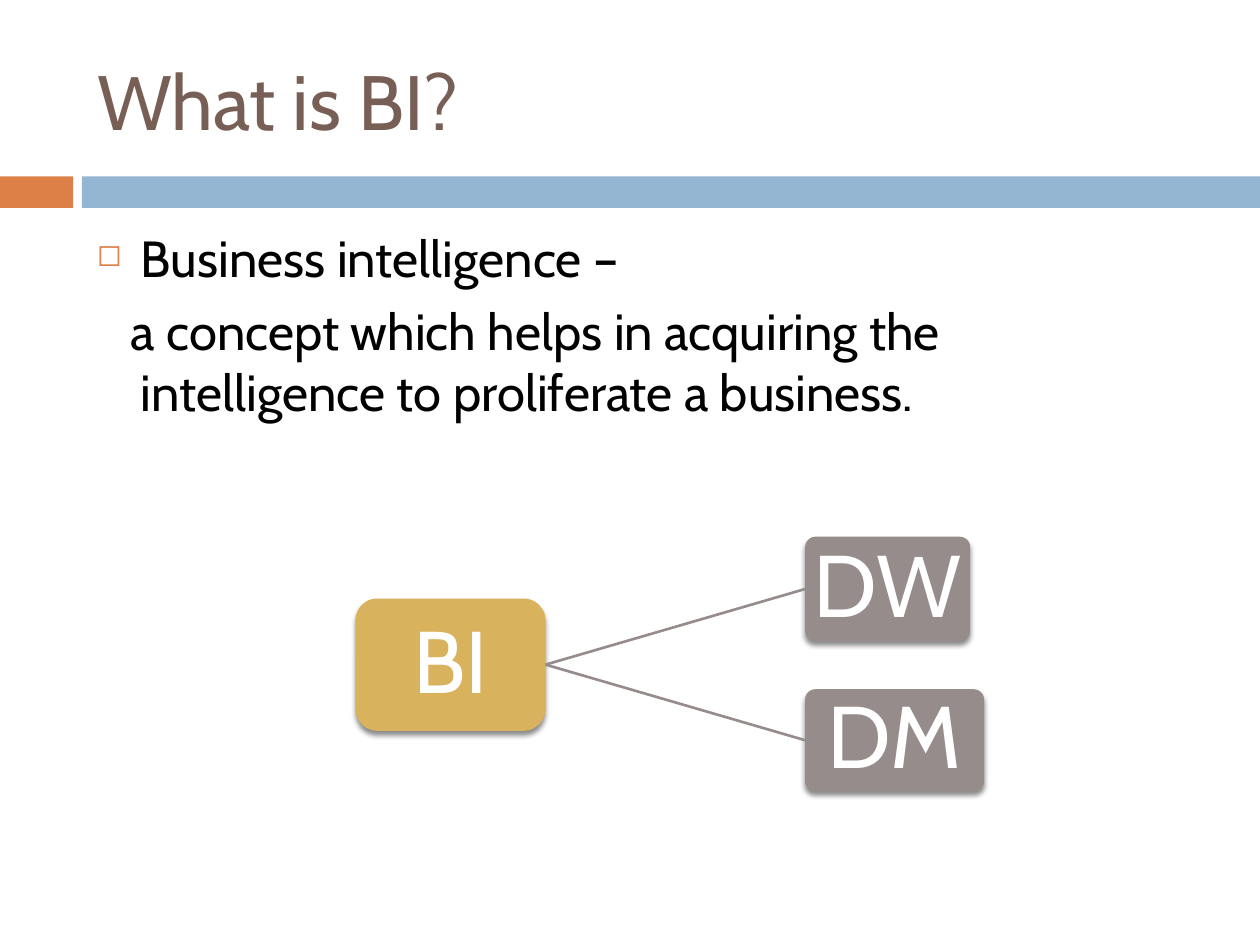
"""Builds a slide that defines BI and shows its two parts."""
from lxml import etree
from pptx import Presentation, util as u
from pptx.dml.color import RGBColor
from pptx.enum import shapes, text
from pptx.oxml import parse_xml
from pptx.oxml.ns import nsdecls, qn

BLACK = RGBColor(0, 0, 0)
WHITE = RGBColor(255, 255, 255)
BROWN = RGBColor(0x77, 0x5F, 0x55)
ORANGE = RGBColor(0xDD, 0x80, 0x47)
BLUE = RGBColor(0x94, 0xB6, 0xD2)
GOLD = RGBColor(0xD8, 0xB2, 0x5C)
GREY = RGBColor(0x96, 0x8C, 0x8C)
KIND = shapes.MSO_SHAPE
MID = text.MSO_ANCHOR.MIDDLE
SHADE = (
    f'<a:effectLst {nsdecls("a")}><a:outerShdw blurRad="38100" dist="30480" dir="5400000" '
    'rotWithShape="0"><a:srgbClr val="000000"><a:alpha val="45000"/></a:srgbClr>'
    '</a:outerShdw></a:effectLst>'
)


def put(item, form):
    """Set each attribute named in a dict."""
    for name, value in form.items():
        setattr(item, name, value)


class Deck:
    """Holds the style, the grid of 100 by 75 cells and the slide."""
    font = "Cabin"
    cols, rows = 100, 75

    def __init__(self):
        """Start the deck with one title-only slide."""
        self.prs = Presentation()
        put(self.prs, {"slide_width": u.Inches(10), "slide_height": u.Inches(7.5)})
        self.slide = self.prs.slides.add_slide(self.prs.slide_layouts[5])
        self.items = self.slide.shapes

    def cells(self, x, y, *rest):
        """Turn pairs of columns and rows into lengths."""
        wide = self.prs.slide_width / self.cols
        high = self.prs.slide_height / self.rows
        return [round(v * (high if i % 2 else wide)) for i, v in enumerate((x, y, *rest))]

    def label(self, para, words, size, color, **form):
        """Fill a paragraph with one styled run."""
        put(para, form)
        run = para.add_run()
        run.text = words
        put(run.font, {"name": self.font, "size": u.Pt(size)})
        run.font.color.rgb = color

    def title(self, words, box):
        """Place and style the title."""
        item = self.items.title
        put(item, dict(zip(("left", "top", "width", "height"), self.cells(*box))))
        put(item.text_frame, {"word_wrap": True, "vertical_anchor": MID})
        self.label(item.text_frame.paragraphs[0], words, 44, BROWN,
                   alignment=text.PP_ALIGN.LEFT)

    def block(self, color, box, kind=KIND.RECTANGLE):
        """Draw a plain filled shape."""
        item = self.items.add_shape(kind, *self.cells(*box))
        item.shadow.inherit = False
        item.fill.solid()
        item.fill.fore_color.rgb = color
        item.line.fill.background()
        return item

    def node(self, words, color, box, kind=KIND.ROUNDED_RECTANGLE):
        """Draw a labelled box with a soft shadow."""
        item = self.block(color, box, kind)
        if kind == KIND.ROUNDED_RECTANGLE:
            item.adjustments[0] = 0.1
        props = item._element.spPr
        props.replace(props.find(qn("a:effectLst")), parse_xml(SHADE))
        frame = item.text_frame
        sides = ("margin_left", "margin_right", "margin_top", "margin_bottom")
        put(frame, dict.fromkeys(sides, u.Inches(0.03)))
        put(frame, {"word_wrap": False, "vertical_anchor": MID})
        self.label(frame.paragraphs[0], words, 50, WHITE,
                   alignment=text.PP_ALIGN.CENTER, line_spacing=0.9)
        return item

    def link(self, start, end):
        """Join the right side of one node to the left of another."""
        line = self.items.add_connector(shapes.MSO_CONNECTOR.STRAIGHT, 0, 0, 0, 0)
        line.begin_connect(start, 3)
        line.end_connect(end, 1)
        line.line.color.rgb = GREY
        line.line.width = u.Pt(1.5)
        etree.SubElement(line._element.spPr, qn("a:effectLst"))

    def body(self, lines, box):
        """Set paragraphs given as words, first indent and bullet."""
        frame = self.items.add_textbox(*self.cells(*box)).text_frame
        put(frame, {"word_wrap": True, "margin_right": u.Inches(0.2)})
        for i, (words, indent, mark) in enumerate(lines):
            para = frame.add_paragraph() if i else frame.paragraphs[0]
            self.label(para, words, 29, BLACK, space_before=u.Pt(7))
            props = para._p.get_or_add_pPr()
            props.set("marL", str(u.Inches(0.35)))
            props.set("indent", str(u.Inches(indent)))
            if mark:
                tint = etree.SubElement(props, qn("a:buClr"))
                etree.SubElement(tint, qn("a:srgbClr"), val=str(ORANGE))
                etree.SubElement(props, qn("a:buSzPct"), val="60000")
                etree.SubElement(props, qn("a:buChar"), char=mark)


def main():
    """Build and save the slide."""
    deck = Deck()
    deck.block(ORANGE, (0, 14, 5.8, 2.5))
    deck.block(BLUE, (6.5, 14, 93.5, 2.5))
    deck.title("What is BI?", (6.7, 2.5, 89.2, 10.8))
    deck.body([
        ("Business intelligence –", -0.35, "◻"),
        ("a concept which helps in acquiring the intelligence to proliferate a business.",
         -0.08, None),
    ], (6.7, 17.5, 89.2, 18.4))
    root = deck.node("BI", GOLD, (28.2, 47.5, 15.1, 10.5), KIND.FLOWCHART_ALTERNATE_PROCESS)
    for words, top, wide, high in (("DW", 42.6, 13.1, 8.3), ("DM", 54.7, 14.2, 8.1)):
        deck.link(root, deck.node(words, GREY, (63.9, top, wide, high)))
    deck.prs.save("out.pptx")


if __name__ == "__main__":
    main()
